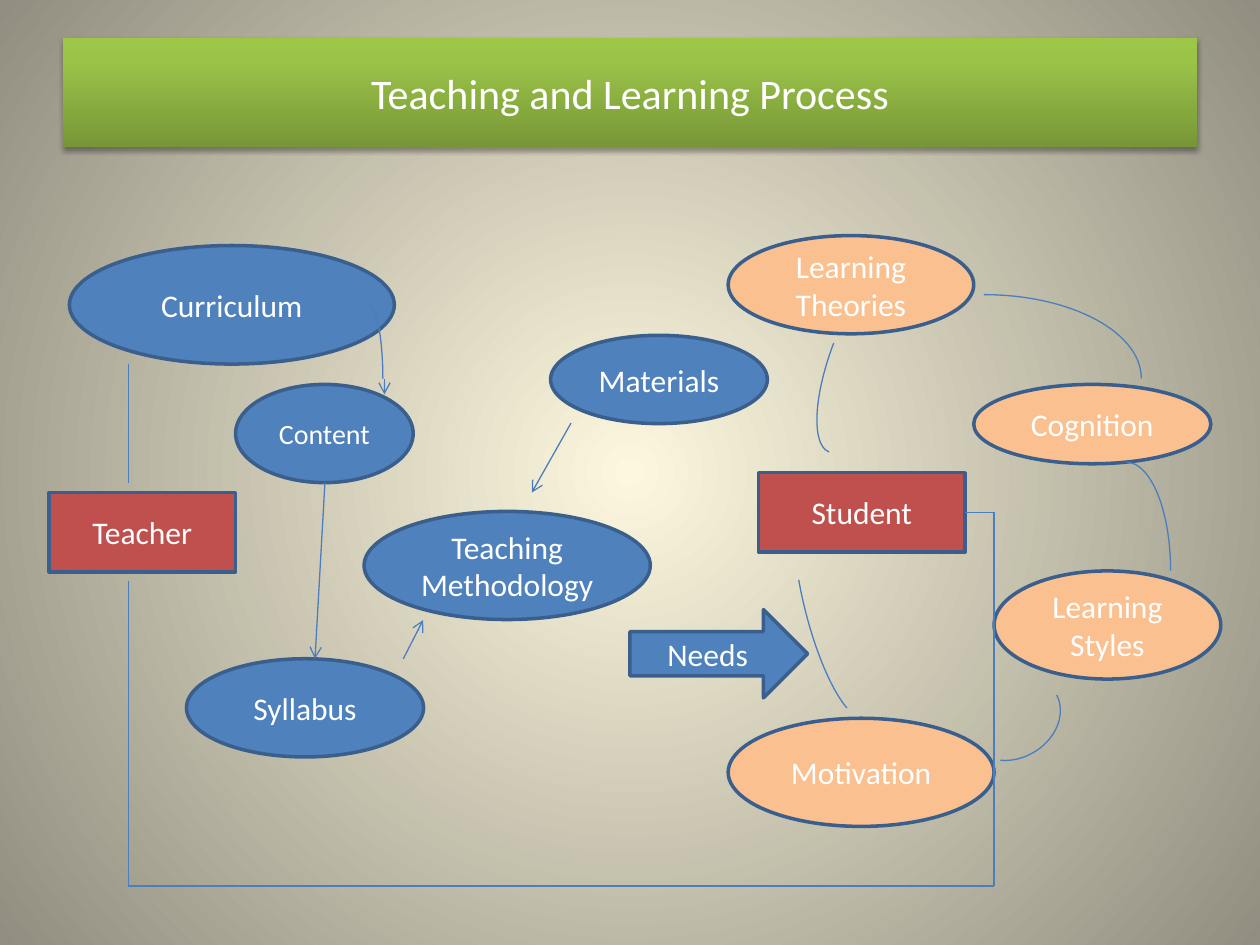
from lxml import etree
from pptx import Presentation
from pptx.dml.color import RGBColor
from pptx.enum import shapes, text
from pptx.oxml import ns
from pptx.util import Cm, Pt

COLORS = {
    "blue": "4F81BD", "peach": "FAC090", "red": "C0504D", "white": "FFFFFF",
    "outline": "3A5F8C", "link": "4B7EBC", "black": "000000",
}
BACKGROUND_STOPS = [(0, "FCF7DD"), (100, "918E81")]
TITLE_STOPS = [(0, "779737"), (80, "9BC348"), (100, "9DC746")]
KIND = shapes.MSO_SHAPE


def color(name):
    return RGBColor.from_string(COLORS[name])


def add_xml(parent, tag, **values):
    return etree.SubElement(parent, ns.qn(tag), {k: str(v) for k, v in values.items()})


class Diagram:
    """Holds the style and the slide being drawn."""

    font = {"name": "Calibri", "size": Pt(18), "bold": False}

    def __init__(self, page):
        self.page = page

    def gradient(self, fill, holder, stops):
        """Give the fill its stops and return the gradient element."""
        fill.gradient()
        grad = next(holder.iter(ns.qn("a:gradFill")))
        for child in list(grad):
            grad.remove(child)
        stop_list = add_xml(grad, "a:gsLst")
        for place, value in stops:
            stop = add_xml(stop_list, "a:gs", pos=place * 1000)
            add_xml(stop, "a:srgbClr", val=value)
        return grad

    def background(self, stops):
        grad = self.gradient(self.page.background.fill, self.page._element, stops)
        circle = add_xml(grad, "a:path", path="circle")
        add_xml(circle, "a:fillToRect", l=50000, t=50000, r=50000, b=50000)

    def label(self, shape, words, size=18):
        frame = shape.text_frame
        frame.word_wrap = True
        frame.vertical_anchor = text.MSO_ANCHOR.MIDDLE
        para = frame.paragraphs[0]
        para.alignment = text.PP_ALIGN.CENTER
        span = para.add_run()
        span.text = words
        for key, value in {**self.font, "size": Pt(size)}.items():
            setattr(span.font, key, value)
        span.font.color.rgb = color("white")

    def title(self, words, left, top, width, height):
        box = self.page.shapes.title
        place = {"left": left, "top": top, "width": width, "height": height}
        for key, value in place.items():
            setattr(box, key, Cm(value))
        grad = self.gradient(box.fill, box._element.spPr, TITLE_STOPS)
        add_xml(grad, "a:lin", ang=270 * 60000, scaled=0)
        effects = add_xml(box._element.spPr, "a:effectLst")
        shadow = add_xml(effects, "a:outerShdw", blurRad=Pt(3.1), dist=Pt(1.8),
                         dir=90 * 60000, rotWithShape=0)
        tint = add_xml(shadow, "a:srgbClr", val=COLORS["black"])
        add_xml(tint, "a:alpha", val=35000)
        self.label(box, words, 24)

    def node(self, kind, fill, words, place, size=18):
        shape = self.page.shapes.add_shape(kind, *map(Cm, place))
        shape.shadow.inherit = False
        shape.fill.solid()
        shape.fill.fore_color.rgb = color(fill)
        shape.line.color.rgb = color("outline")
        shape.line.width = Pt(2)
        self.label(shape, words, size)
        return shape

    def arc(self, place, turn=0, ends=(270, 0)):
        """Draw an arc between two angles in degrees, then turn it."""
        shape = self.page.shapes.add_shape(KIND.ARC, *map(Cm, place))
        shape.shadow.inherit = False
        shape.fill.background()
        shape.line.color.rgb = color("link")
        shape.line.width = Pt(0.75)
        shape.rotation = turn
        for i, angle in enumerate(ends):
            shape.adjustments[i] = angle * 0.6

    def link(self, start, end, arrow=False):
        line = self.page.shapes.add_connector(
            shapes.MSO_CONNECTOR.STRAIGHT, *map(Cm, start + end))
        line.line.color.rgb = color("link")
        line.line.width = Pt(0.75)
        properties = line._element.spPr
        if arrow:
            add_xml(properties.get_or_add_ln(), "a:tailEnd", type="arrow")
        add_xml(properties, "a:effectLst")
        return line


def main():
    deck = Presentation()
    deck.slide_width, deck.slide_height = Cm(25.4), Cm(19.05)
    diagram = Diagram(deck.slides.add_slide(deck.slide_layouts[5]))
    diagram.background(BACKGROUND_STOPS)
    diagram.title("Teaching and Learning Process", 1.27, 0.76, 22.86, 2.21)

    # Teaching side in blue, learning side in peach
    for fill, words, place, size in [
        ("blue", "Curriculum", (1.4, 4.95, 6.55, 2.39), 18),
        ("blue", "Content", (4.75, 7.75, 3.58, 1.98), 16),
        ("blue", "Syllabus", (3.76, 13.28, 4.78, 1.98), 18),
        ("blue", "Materials", (11.1, 6.76, 4.37, 1.78), 18),
        ("blue", "Teaching Methodology", (7.34, 10.31, 5.77, 2.18), 18),
        ("peach", "Learning Theories", (14.68, 4.75, 4.95, 1.98), 18),
        ("peach", "Cognition", (19.63, 7.75, 4.78, 1.6), 18),
        ("peach", "Learning Styles", (20.04, 11.51, 4.57, 2.18), 18),
        ("peach", "Motivation", (14.68, 14.48, 5.36, 2.18), 18),
    ]:
        diagram.node(KIND.OVAL, fill, words, place, size)

    # People
    diagram.node(KIND.RECTANGLE, "red", "Teacher", (0.99, 9.93, 3.76, 1.6))
    student = diagram.node(KIND.RECTANGLE, "red", "Student", (15.29, 9.53, 4.17, 1.6))

    # Curved links
    diagram.arc((7.14, 6.15, 0.58, 2.97))
    diagram.arc((16.66, 5.94, 6.35, 3.38))
    diagram.arc((21.82, 9.32, 1.78, 4.37))
    diagram.arc((19.63, 13.49, 1.6, 1.98), 59.9, (271.88, 47.49))
    diagram.arc((16.18, 9.45, 1.4, 5.11), 166.8, (278.36, 35.27))
    diagram.arc((16.76, 5.08, 1.4, 4.17), 201)

    # Arrows between the teaching topics
    for start, end in [
        ((7.75, 7.65), (7.75, 7.95)),
        ((6.55, 9.73), (6.35, 13.28)),
        ((8.13, 13.28), (8.53, 12.5)),
        ((11.51, 8.53), (10.72, 9.93)),
    ]:
        diagram.link(start, end, arrow=True)

    # Route from curriculum through teacher to student
    diagram.link((2.59, 7.34), (2.59, 9.73))
    route = [(2.59, 11.71), (2.59, 17.86), (20.04, 17.86), (20.04, 10.33), (19.46, 10.33)]
    for start, end in zip(route, route[1:]):
        last = diagram.link(start, end)
    last.end_connect(student, 3)

    diagram.node(KIND.RIGHT_ARROW, "blue", "Needs", (12.7, 12.29, 3.58, 1.78))
    deck.save("out.pptx")


if __name__ == "__main__":
    main()
